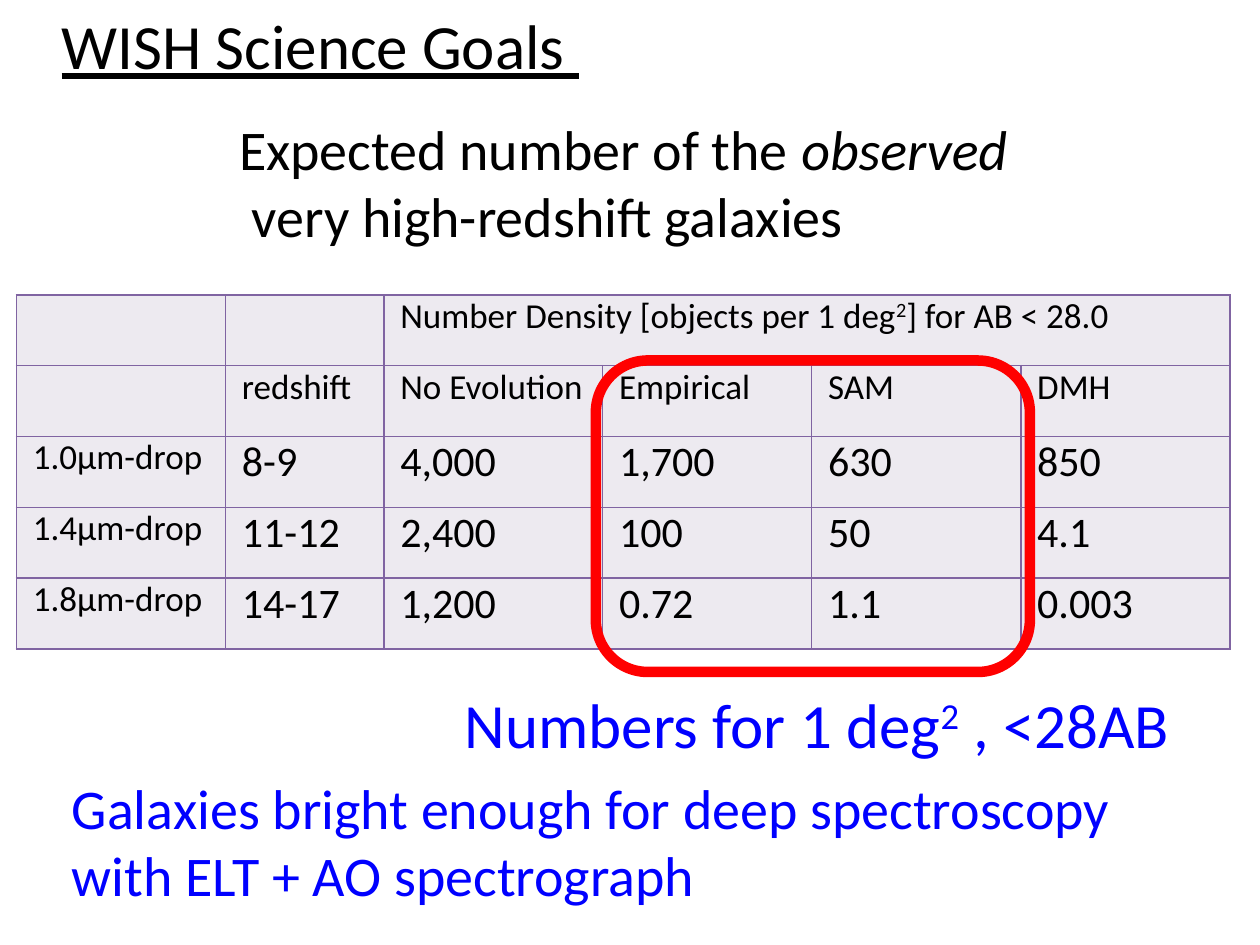
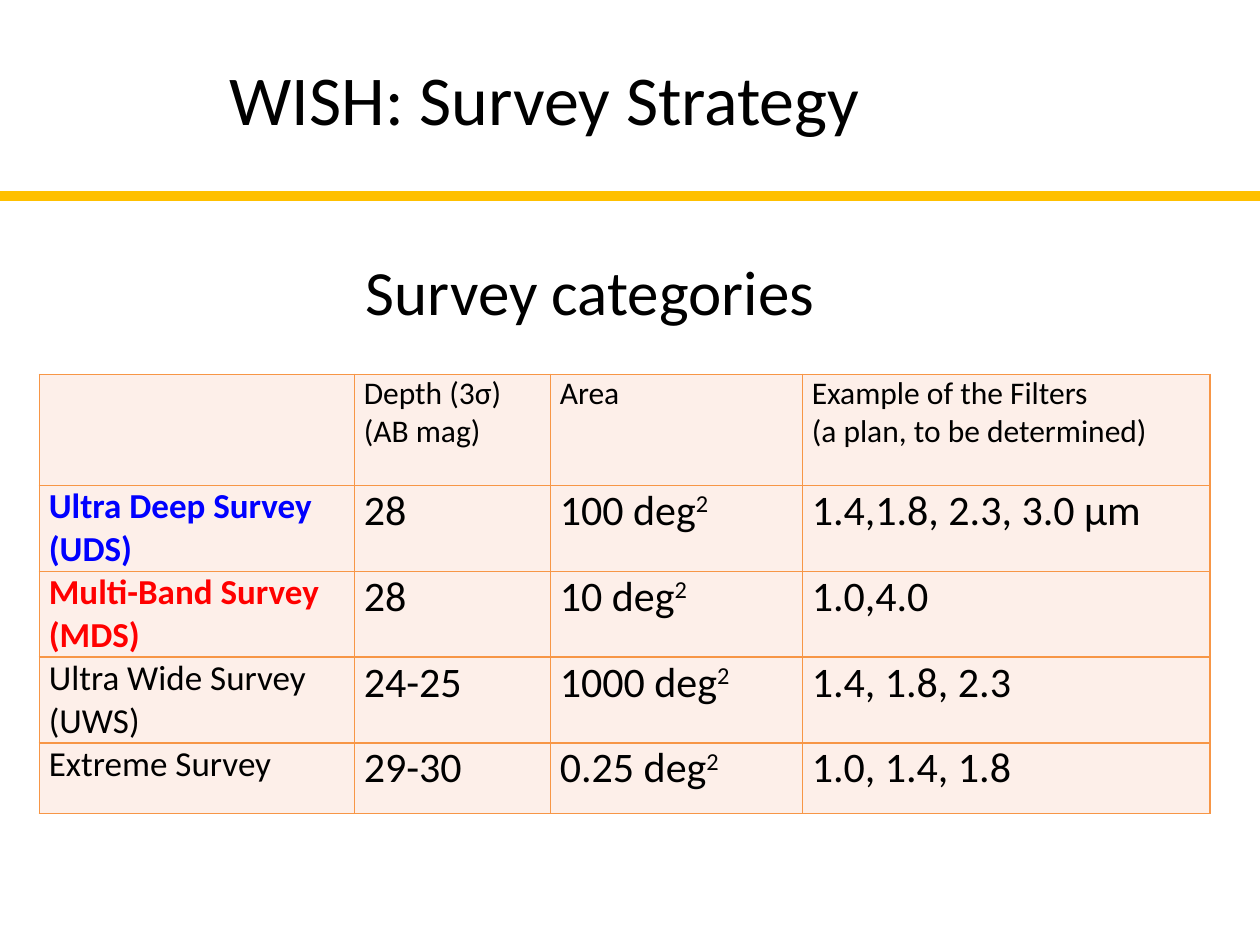
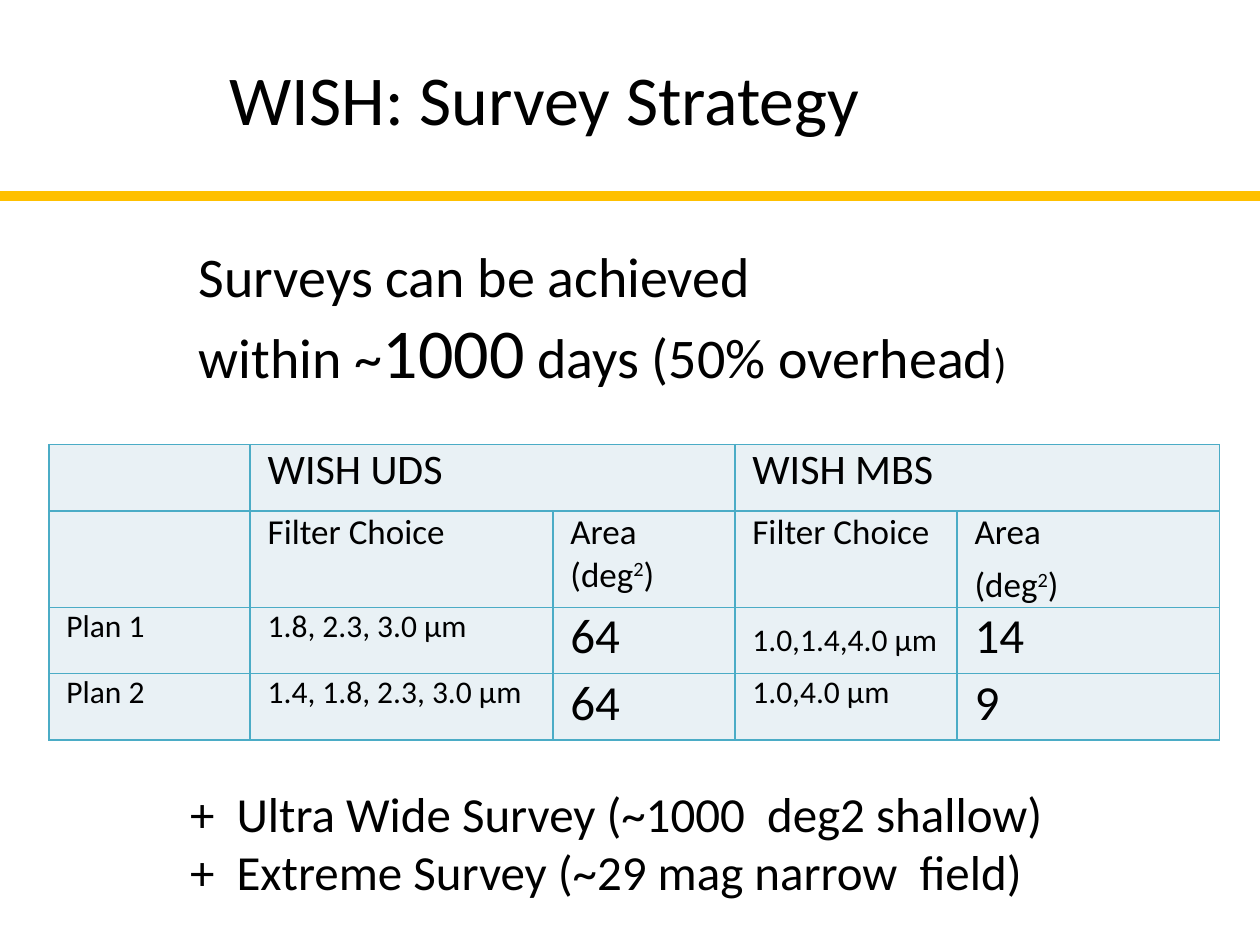
"""Build three slides on the WISH science goals and survey strategy."""
from lxml.etree import SubElement
from pptx import Presentation
from pptx.dml.color import RGBColor
from pptx.enum.shapes import MSO_CONNECTOR, MSO_SHAPE
from pptx.enum.text import MSO_ANCHOR, MSO_AUTO_SIZE, PP_ALIGN
from pptx.oxml.ns import qn
from pptx.util import Pt

FONT = "Calibri"
BLACK, BLUE, RED, GOLD = "000000", "0000FF", "FF0000", "FFC000"


def rgb(value):
    return RGBColor.from_string(value)


def write(frame, text, size=18, color=BLACK, bold=False, italic=False,
          underline=False, align=PP_ALIGN.LEFT, after=0):
    """Fill a frame: newlines split paragraphs, ^..^ is superscript, a (text, format) pair is a run."""
    pieces = [text] if isinstance(text, str) else text
    paragraph = frame.paragraphs[0]
    paragraphs = [paragraph]
    for piece in pieces:
        content, changes = (piece, {}) if isinstance(piece, str) else piece
        for line_number, line in enumerate(content.split("\n")):
            if line_number:
                paragraph = frame.add_paragraph()
                paragraphs.append(paragraph)
            for part_number, part in enumerate(line.split("^")):
                if not part:
                    continue
                run = paragraph.add_run()
                run.text = part
                font = run.font
                font.name = FONT
                font.size = Pt(changes.get("size", size))
                font.color.rgb = rgb(color)
                font.bold = bold
                font.italic = changes.get("italic", italic)
                font.underline = underline
                if part_number % 2:
                    run._r.get_or_add_rPr().set("baseline", "30000")
    for paragraph in paragraphs:
        paragraph.alignment = align
        paragraph.space_before = Pt(0)
        paragraph.space_after = Pt(after)


class Deck:
    """Holds the presentation, its shared style and the current slide."""

    def __init__(self):
        self.presentation = Presentation()
        self.presentation.slide_width = Pt(720)
        self.presentation.slide_height = Pt(540)
        self.slide = None

    def title_slide(self, title, box, **style):
        self.slide = self.presentation.slides.add_slide(self.presentation.slide_layouts[5])
        heading = self.slide.shapes.title
        heading.left, heading.top, heading.width, heading.height = map(Pt, box)
        self.fill_frame(heading.text_frame, title, **style)

    def strategy_slide(self):
        self.title_slide("WISH: Survey Strategy", (124, 28, 394, 56), size=40)
        self.rule(112)

    def fill_frame(self, frame, text, **style):
        frame.word_wrap = True
        frame.auto_size = MSO_AUTO_SIZE.NONE
        frame.vertical_anchor = MSO_ANCHOR.TOP
        write(frame, text, **style)

    def text(self, text, box, **style):
        self.fill_frame(self.slide.shapes.add_textbox(*map(Pt, box)).text_frame, text, **style)

    def rule(self, top):
        band = self.slide.shapes.add_connector(
            MSO_CONNECTOR.STRAIGHT, Pt(0), Pt(top), Pt(720), Pt(top))
        band.line.color.rgb = rgb(GOLD)
        band.line.width = Pt(6)
        SubElement(band._element.spPr, qn("a:effectLst"))

    def highlight(self, box):
        frame = self.slide.shapes.add_shape(MSO_SHAPE.ROUNDED_RECTANGLE, *map(Pt, box))
        frame.shadow.inherit = False
        frame.fill.background()
        frame.line.color.rgb = rgb(RED)
        frame.line.width = Pt(6)

    def border(self, cell, color):
        properties = cell._tc.get_or_add_tcPr()
        for side in ("lnL", "lnR", "lnT", "lnB"):
            edge = SubElement(properties, qn(f"a:{side}"), w=str(Pt(1)))
            SubElement(SubElement(edge, qn("a:solidFill")), qn("a:srgbClr"), val=color)

    def table(self, origin, widths, heights, rows, fill, edge, inset, style, spans=()):
        grid = self.slide.shapes.add_table(
            len(heights), len(widths), *map(Pt, (*origin, sum(widths), sum(heights)))).table
        grid.first_row = grid.horz_banding = False
        for column, width in zip(grid.columns, widths):
            column.width = Pt(width)
        for row, height in zip(grid.rows, heights):
            row.height = Pt(height)
        for r, row in enumerate(rows):
            for c, text in enumerate(row):
                cell = grid.cell(r, c)
                cell.margin_left = cell.margin_right = Pt(inset)
                cell.margin_top = cell.margin_bottom = Pt(0)
                self.border(cell, edge)
                cell.fill.solid()
                cell.fill.fore_color.rgb = rgb(fill)
                if text:
                    write(cell.text_frame, text, **style(r, c))
        for r, first, last in spans:
            grid.cell(r, first).merge(grid.cell(r, last))
        return grid


def density_style(row, column):
    return {"size": 24 if row > 1 and column else 20,
            "align": PP_ALIGN.JUSTIFY, "after": 6}


def category_style(row, column):
    if row == 0:
        return {"size": 18}
    if column:
        return {"size": 24}
    return {"size": 20, "bold": row < 3, "color": {1: BLUE, 2: RED}.get(row, BLACK)}


def plan_style(row, column):
    size = (24, 20)[row] if row < 2 else 28 if column in (2, 4) else 18
    return {"size": size, "align": PP_ALIGN.JUSTIFY, "after": 6}


def science_goals(deck):
    deck.title_slide("WISH Science Goals ", (28, 0, 506, 51), size=36, underline=True)
    deck.table(
        (9.4, 168.5), [119.5, 90.5, 125, 119.5, 119.5, 119.5], [40.5] * 5,
        [["", "", "Number Density [objects per 1 deg^2^] for AB < 28.0", "", "", ""],
         ["", "redshift", "No Evolution", "Empirical", "SAM", "DMH"],
         ["1.0μm-drop", "8-9", "4,000", "1,700", "630", "850"],
         ["1.4μm-drop", "11-12", "2,400", "100", "50", "4.1"],
         ["1.8μm-drop", "14-17", "1,200", "0.72", "1.1", "0.003"]],
        "EDEAF0", "8064A2", 9.4, density_style, spans=[(0, 2, 5)])
    deck.text(["Expected number of the ", ("observed", {"italic": True}),
               "\n very high-redshift galaxies"], (129.5, 62, 464, 85), size=32)
    deck.highlight((340.5, 206, 248, 178))
    deck.text("Numbers for 1 deg^2^ , <28AB", (258.5, 388, 425, 51), size=36, color=BLUE)
    deck.text("Galaxies bright enough for deep spectroscopy\nwith ELT + AO spectrograph",
              (34, 438.5, 670, 85), size=32, color=BLUE)


def survey_categories(deck):
    deck.strategy_slide()
    deck.table(
        (22.5, 214), [180, 112, 144, 233], [63.5, 48, 48, 48, 40.5],
        [["", "Depth (3σ)\n(AB mag)", "Area",
          "Example of the Filters\n(a plan, to be determined)"],
         ["Ultra Deep Survey\n(UDS)", "28", "100 deg^2^", "1.4,1.8, 2.3, 3.0 μm"],
         ["Multi-Band Survey\n(MDS)", "28", "10 deg^2^", "1.0,4.0"],
         ["Ultra Wide Survey\n(UWS)", "24-25", "1000 deg^2^", "1.4, 1.8, 2.3"],
         ["Extreme Survey", "29-30", "0.25 deg^2^", "1.0, 1.4, 1.8"]],
        "FDEFE9", "F79646", 5.4, category_style)
    deck.text("Survey categories", (202, 140.5, 282, 51), size=36)


def survey_plans(deck):
    deck.strategy_slide()
    plans = deck.table(
        (28, 254), [115, 173, 104, 127, 150], [38, 54, 38, 38],
        [["", "WISH UDS", "", "WISH MBS", ""],
         ["", "Filter Choice", "Area (deg^2^)", "Filter Choice", "Area\n(deg^2^)"],
         ["Plan 1", "1.8, 2.3, 3.0 μm", "64", "1.0,1.4,4.0 μm", "14"],
         ["Plan 2", "1.4, 1.8, 2.3, 3.0 μm", "64", "1.0,4.0 μm", "9"]],
        "E9F1F5", "4BACC6", 10, plan_style, spans=[(0, 1, 2), (0, 3, 4)])
    plans.cell(2, 3).vertical_anchor = MSO_ANCHOR.MIDDLE
    deck.text(["Surveys can be achieved\nwithin ~", ("1000", {"size": 40}),
               " days (50% overhead", (")", {"size": 24})],
              (106.5, 134.5, 482, 94), size=32)
    deck.text("+  Ultra Wide Survey (~1000  deg2 shallow)\n"
              "+  Extreme Survey (~29 mag narrow  field)",
              (101.5, 444, 506, 75), size=28)


def main():
    deck = Deck()
    science_goals(deck)
    survey_categories(deck)
    survey_plans(deck)
    deck.presentation.save("out.pptx")


if __name__ == "__main__":
    main()
